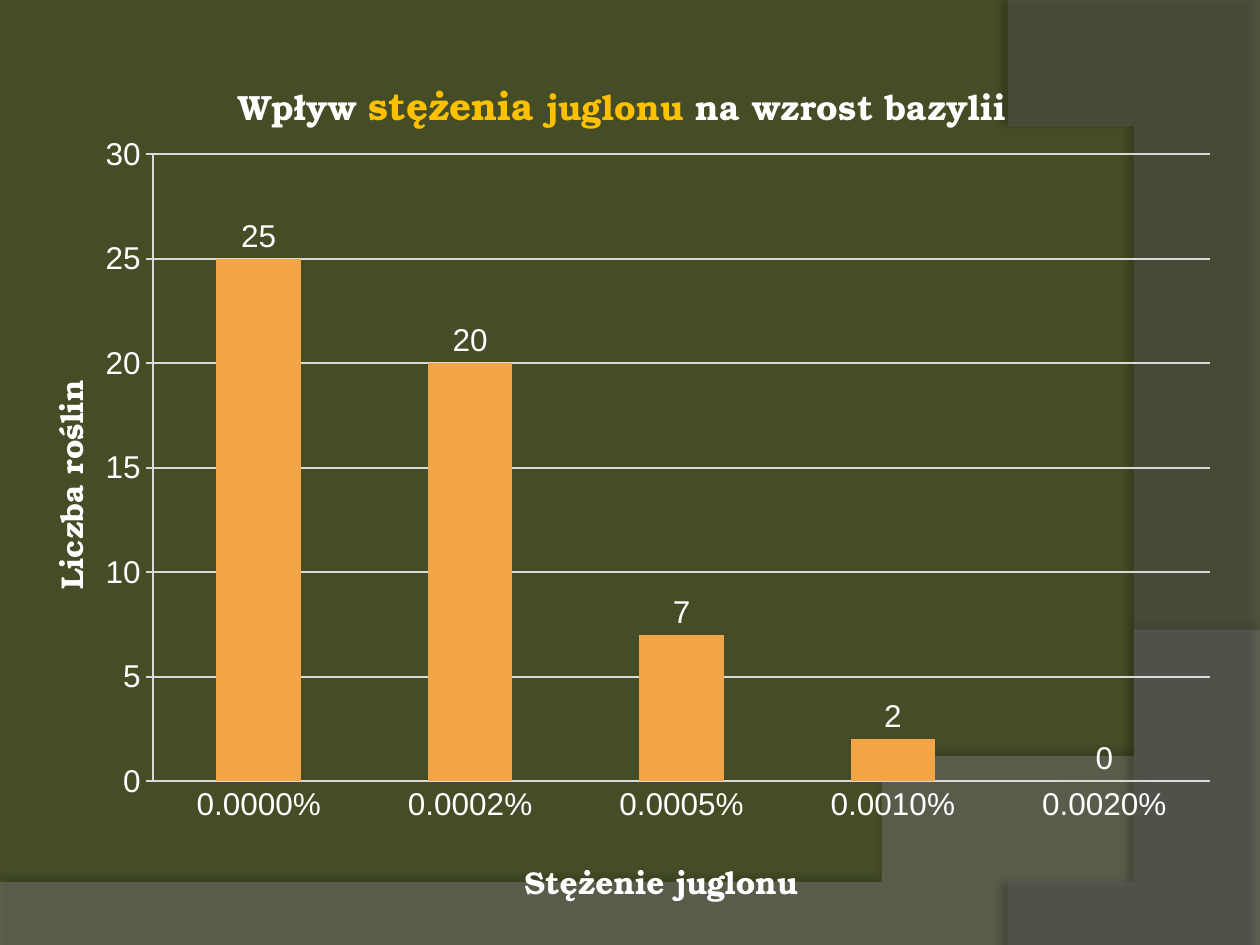
from lxml import etree
from pptx import Presentation
from pptx import util as u
from pptx.chart.data import CategoryChartData
from pptx.dml.color import RGBColor
from pptx.enum import chart as ch
from pptx.oxml import parse_xml
from pptx.oxml.ns import qn

W, H = 10, 7.5
BODY, HEAD = "Arial", "TeX Gyre Bonum"
WHITE, GOLD, ORANGE, GRID = "FFFFFF", "FFC000", "F3A447", "D9D9D9"
DATA = {"0.0000%": 25, "0.0002%": 20, "0.0005%": 7, "0.0010%": 2, "0.0020%": 0}
TITLE = [("Wpływ ", 20, WHITE), ("stężenia ", 22, GOLD),
         ("juglonu ", 20, GOLD), ("na wzrost bazylii", 20, WHITE)]
CAT_TITLE = [("Stężenie juglonu", 18, WHITE)]
VAL_TITLE = [("Liczba roślin", 18, WHITE)]

# Background waves: a Bezier edge, then the straight corners that close it
WAVES = [
    dict(curve=[(W, 5.2), (5.59, 7.29), (3.91, 7.19), (0, 7.05)],
         corners=[(0, H), (W, H)], color="7F7F7F", alpha=45,
         shadow=dict(alpha=35, blur=4, dist=3.5, angle=270)),
    dict(curve=[(8.21, H), (9.35, 6.19), (10.18, 3), (8, 0)],
         corners=[(W, 0.02), (W, H)], color="5E5E5E", alpha=40,
         shadow=dict(alpha=45, blur=4, dist=4, angle=180)),
]


def rgb(color):
    return RGBColor.from_string(color)


def bezier(pts, steps=60):
    for i in range(steps + 1):
        t = i / steps
        weights = ((1 - t) ** 3, 3 * t * (1 - t) ** 2, 3 * t * t * (1 - t), t ** 3)
        yield tuple(sum(k * p[axis] for k, p in zip(weights, pts)) for axis in (0, 1))


def add_wave(slide, curve, corners, color, alpha, shadow):
    start, *rest = [*bezier(curve), *corners]
    builder = slide.shapes.build_freeform(*start, scale=u.Inches(1))
    builder.add_line_segments(rest, close=True)
    sp = builder.convert_to_shape()
    sp.shadow.inherit = False
    sp.fill.solid()
    sp.fill.fore_color.rgb = rgb(color)
    sp.line.fill.background()
    clr = sp.fill._xPr.find(qn("a:solidFill"))[0]
    etree.SubElement(clr, qn("a:alpha"), val=str(alpha * 1000))
    effects = sp._element.spPr.find(qn("a:effectLst"))
    outer = etree.SubElement(
        effects, qn("a:outerShdw"), blurRad=str(u.Pt(shadow["blur"])),
        dist=str(u.Pt(shadow["dist"])), dir=str(shadow["angle"] * 60000),
        algn="ctr", rotWithShape="0")
    black = etree.SubElement(outer, qn("a:srgbClr"), val="000000")
    etree.SubElement(black, qn("a:alpha"), val=str(shadow["alpha"] * 1000))


def set_font(font, size, color=WHITE, name=BODY, bold=False):
    font.size, font.name, font.bold = u.Pt(size), name, bold
    font.color.rgb = rgb(color)


def layout_xml(x, y, w=None, h=None):
    """Manual chart layout in shares of the chart's size."""
    tags = [("xMode", "edge"), ("yMode", "edge"), ("x", x), ("y", y)]
    if w:
        tags = [("layoutTarget", "inner")] + tags + [("w", w), ("h", h)]
    inner = "".join(f'<c:{tag} val="{val}"/>' for tag, val in tags)
    return parse_xml(
        '<c:layout xmlns:c="http://schemas.openxmlformats.org/drawingml/2006/chart">'
        f"<c:manualLayout>{inner}</c:manualLayout></c:layout>")


def set_title(owner, runs, x, y):
    owner.has_title = True
    title = owner.chart_title if hasattr(owner, "chart_title") else owner.axis_title
    p = title.text_frame.paragraphs[0]
    for txt, size, color in runs:
        r = p.add_run()
        r.text = txt
        set_font(r.font, size, color, HEAD, True)
    el = title._element
    for old in el.findall(qn("c:layout")):
        el.remove(old)
    el.find(qn("c:tx")).addnext(layout_xml(x, y))


def set_line(line, color=GRID, width=1):
    line.color.rgb = rgb(color)
    line.width = u.Pt(width)


def add_bar_chart(slide):
    data = CategoryChartData(number_format="0")
    data.categories = list(DATA)
    data.add_series("Liczba roślin", list(DATA.values()))
    chart = slide.shapes.add_chart(
        ch.XL_CHART_TYPE.COLUMN_CLUSTERED, 0, u.Inches(0.21),
        u.Inches(9.8), u.Inches(7.09), data).chart
    chart.has_legend = False
    set_font(chart.font, 18)

    # Titles
    set_title(chart, TITLE, 0.19, 0.05)
    set_title(chart.category_axis, CAT_TITLE, 0.42, 0.92)
    set_title(chart.value_axis, VAL_TITLE, 0.03, 0.39)

    # Axes and plot area
    cat, val = chart.category_axis, chart.value_axis
    cat.major_tick_mark = ch.XL_TICK_MARK.NONE
    val.major_tick_mark = ch.XL_TICK_MARK.CROSS
    val.minimum_scale, val.maximum_scale, val.major_unit = 0, 30, 5
    val.has_major_gridlines = True
    for line in (cat.format.line, val.format.line, val.major_gridlines.format.line):
        set_line(line)
    area = chart.plots[0]._element.getparent()
    for old in area.findall(qn("c:layout")):
        area.remove(old)
    area.insert(0, layout_xml(0.124, 0.143, 0.856, 0.702))

    # Bars and their labels
    plot = chart.plots[0]
    plot.gap_width, plot.vary_by_categories = 150, False
    fill = plot.series[0].format.fill
    fill.solid()
    fill.fore_color.rgb = rgb(ORANGE)
    plot.has_data_labels = True
    labels = plot.data_labels
    labels.show_value = True
    labels.number_format, labels.number_format_is_linked = "0", False
    labels.position = ch.XL_LABEL_POSITION.OUTSIDE_END
    set_font(labels.font, 18)


def main():
    prs = Presentation()
    prs.slide_width, prs.slide_height = u.Inches(W), u.Inches(H)
    slide = prs.slides.add_slide(prs.slide_layouts[6])
    slide.background.fill.solid()
    slide.background.fill.fore_color.rgb = rgb("444D26")
    for wave in WAVES:
        add_wave(slide, **wave)
    add_bar_chart(slide)
    prs.save("out.pptx")


if __name__ == "__main__":
    main()
